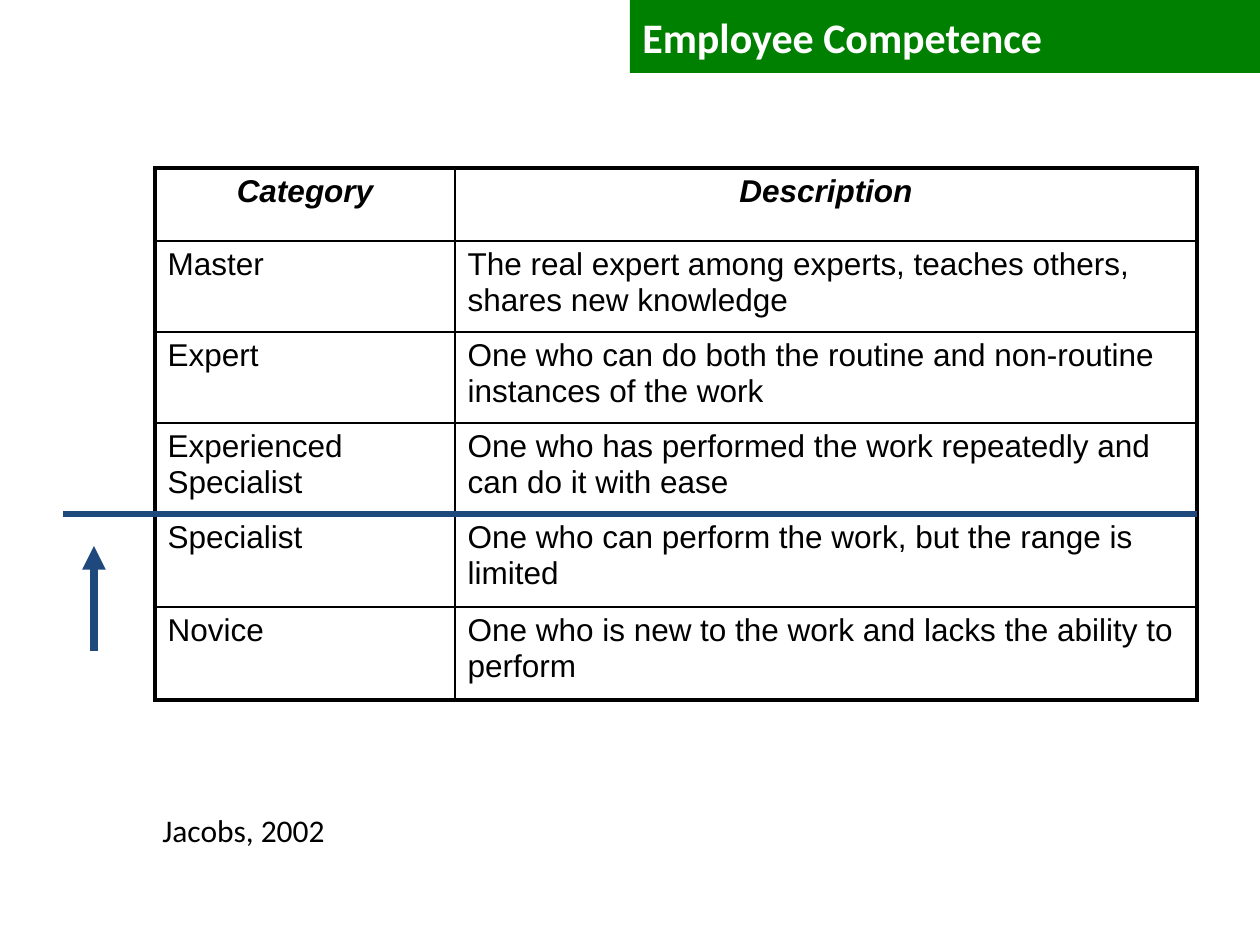
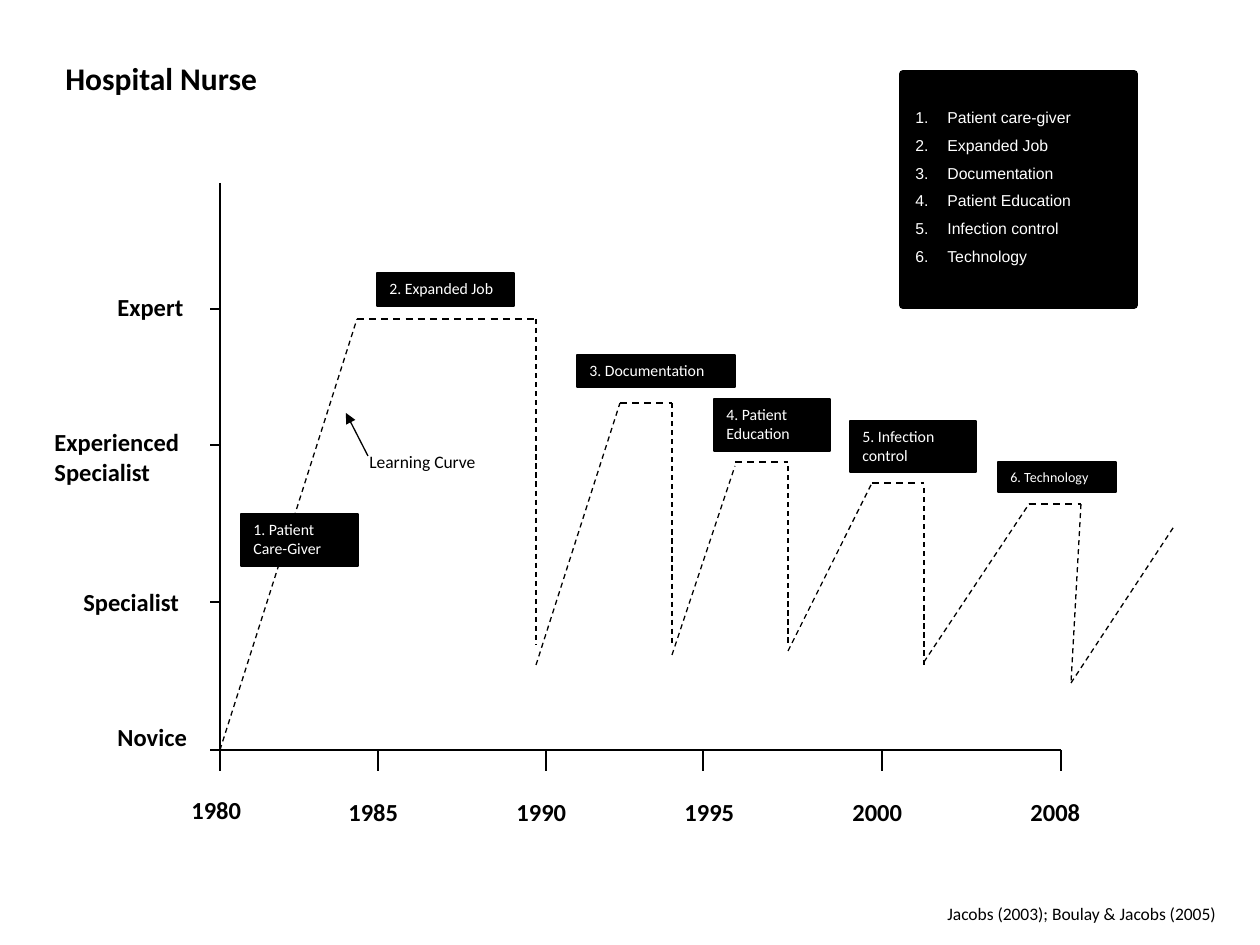
"""Build two slides on employee competence and the learning curves of a nurse."""
from lxml.etree import SubElement
from pptx import Presentation
from pptx.dml.color import RGBColor
from pptx.enum.dml import MSO_LINE
from pptx.enum.shapes import MSO_CONNECTOR, MSO_SHAPE
from pptx.enum.text import MSO_ANCHOR, PP_ALIGN
from pptx.oxml.ns import qn
from pptx.util import Pt

PX = 914400 / 126
BLACK = RGBColor(0x00, 0x00, 0x00)
WHITE = RGBColor(0xFF, 0xFF, 0xFF)
GREEN = RGBColor(0x00, 0x80, 0x00)
NAVY = RGBColor(0x1F, 0x49, 0x7D)

TITLE = {"name": "Calibri", "size": Pt(24), "bold": True}
HEADING = {"name": "Calibri", "size": Pt(18), "bold": True}
SOURCE = {"name": "Calibri", "size": Pt(18)}
AXIS = {"name": "Calibri", "size": Pt(14), "bold": True}
NOTE = {"name": "Calibri", "size": Pt(10)}
LABEL = {"name": "Calibri", "size": Pt(9)}
SMALL_LABEL = {"name": "Calibri", "size": Pt(8)}
LEGEND = {"name": "Arial", "size": Pt(9)}
CELL = {"name": "Arial", "size": Pt(18), "bold": False, "italic": False}
HEADER_CELL = {"name": "Arial", "size": Pt(18), "bold": True, "italic": True}


def add_box(page, place, lines, style, fill=None, border=0, wrap=True):
    """Add a text box, or a rectangle when a fill is given, and return it."""
    left, top, width, height = (round(value * PX) for value in place)
    if fill is None:
        box = page.shapes.add_textbox(left, top, width, height)
    else:
        box = page.shapes.add_shape(MSO_SHAPE.RECTANGLE, left, top, width, height)
        box.shadow.inherit = False
        box.fill.solid()
        box.fill.fore_color.rgb = fill
        box.line.color.rgb = fill
        box.line.width = Pt(border)
        if not border:
            box.line.fill.background()
    frame = box.text_frame
    frame.word_wrap = wrap
    frame.vertical_anchor = MSO_ANCHOR.TOP
    for index, line in enumerate(lines):
        para = frame.paragraphs[0] if index == 0 else frame.add_paragraph()
        para.alignment = PP_ALIGN.LEFT
        span = para.add_run()
        span.text = line
        span.font.color.rgb = BLACK if fill is None else WHITE
        for key, value in style.items():
            setattr(span.font, key, value)
    return box


def add_line(page, ends, color=BLACK, width=0.75, dashed=False, arrow=False):
    """Add a straight line, with an arrowhead at its end if asked."""
    line = page.shapes.add_connector(
        MSO_CONNECTOR.STRAIGHT, *(round(value * PX) for value in ends))
    line.line.color.rgb = color
    line.line.width = Pt(width)
    if dashed:
        line.line.dash_style = MSO_LINE.DASH
    properties = line._element.spPr
    if arrow:
        SubElement(properties.find(qn("a:ln")), qn("a:tailEnd"), type="triangle")
    SubElement(properties, qn("a:effectLst"))


deck = Presentation()
deck.slide_width = round(1260 * PX)
deck.slide_height = round(945 * PX)
blank = deck.slide_layouts[6]

page = deck.slides.add_slide(blank)
rows = [
    ("Category", "Description"),
    ("Master", "The real expert among experts, teaches others, shares new knowledge"),
    ("Expert", "One who can do both the routine and non-routine instances of the work"),
    ("Experienced Specialist",
     "One who has performed the work repeatedly and can do it with ease"),
    ("Specialist", "One who can perform the work, but the range is limited"),
    ("Novice", "One who is new to the work and lacks the ability to perform"),
]
column_widths = [300, 742]
row_heights = [73, 91, 91, 91, 93, 93]
table = page.shapes.add_table(
    len(rows), 2, round(155 * PX), round(168 * PX),
    round(sum(column_widths) * PX), round(sum(row_heights) * PX)).table
table.first_row = table.horz_banding = False
for column, width in zip(table.columns, column_widths):
    column.width = round(width * PX)
for row_index, (texts, height) in enumerate(zip(rows, row_heights)):
    table.rows[row_index].height = round(height * PX)
    for column_index, text in enumerate(texts):
        cell = table.cell(row_index, column_index)
        para = cell.text_frame.paragraphs[0]
        para.alignment = PP_ALIGN.LEFT if row_index else PP_ALIGN.CENTER
        span = para.add_run()
        span.text = text
        span.font.color.rgb = BLACK
        for key, value in (CELL if row_index else HEADER_CELL).items():
            setattr(span.font, key, value)
        outer_sides = {
            "lnL": column_index == 0,
            "lnR": column_index == 1,
            "lnT": row_index == 0,
            "lnB": row_index == len(rows) - 1,
        }
        properties = cell._tc.get_or_add_tcPr()
        for side, outer in outer_sides.items():
            border = SubElement(properties, qn(f"a:{side}"), w=str(Pt(2.25 if outer else 1)))
            SubElement(SubElement(border, qn("a:solidFill")), qn("a:srgbClr"), val=str(BLACK))
        cell.fill.background()

add_line(page, (63, 514, 1197, 514), NAVY, 3)
add_line(page, (94, 651, 94, 546), NAVY, 4.5, arrow=True)
title = add_box(page, (630, 0, 630, 73), ["Employee Competence"], TITLE, GREEN)
title.text_frame.vertical_anchor = MSO_ANCHOR.MIDDLE
add_box(page, (150, 805, 190, 50), ["Jacobs, 2002"], SOURCE, wrap=False)

page = deck.slides.add_slide(blank)
axis_x, axis_y = 220, 750
add_line(page, (axis_x, 183, axis_x, 760))
add_line(page, (axis_x, axis_y, 1061, axis_y))

levels = [
    (axis_y, (105, 716, 106, 42), ["Novice"]),
    (602, (71, 581, 140, 42), ["Specialist"]),
    (445, (42, 421, 170, 72), ["Experienced", "Specialist"]),
    (309, (105, 286, 102, 42), ["Expert"]),
]
for tick, place, lines in levels:
    add_line(page, (axis_x, tick, axis_x - 10, tick))
    add_box(page, place, lines, AXIS, wrap=False)

years = [
    (220, 179, 789, "1980"),
    (378, 336, 791, "1985"),
    (546, 504, 791, "1990"),
    (703, 672, 791, "1995"),
    (882, 840, 791, "2000"),
    (1061, 1018, 791, "2008"),
]
for tick, left, top, year in years:
    add_line(page, (tick, axis_y, tick, axis_y + 21))
    add_box(page, (left, top, 79, 42), [year], AXIS, wrap=False)

learning_curve = [
    (axis_x, axis_y, 357, 319), (357, 319, 536, 319), (536, 319, 536, 645),
    (536, 665, 620, 403), (620, 403, 672, 403), (672, 403, 672, 645),
    (672, 655, 735, 466), (735, 462, 788, 462), (788, 466, 788, 645),
    (788, 651, 872, 483), (872, 483, 924, 483), (924, 488, 924, 665),
    (924, 662, 1029, 504), (1029, 504, 1081, 504), (1081, 504, 1071, 683),
    (1071, 683, 1175, 525),
]
for ends in learning_curve:
    flat = ends[1] == ends[3]
    add_line(page, ends, width=1 if flat else 0.75, dashed=True)

stages = [
    ((241, 514, 117, 52), "1. Patient Care-Giver", LABEL),
    ((377, 273, 137, 33), "2. Expanded Job", LABEL),
    ((577, 355, 158, 32), "3. Documentation", LABEL),
    ((714, 399, 116, 52), "4. Patient Education", LABEL),
    ((850, 421, 126, 51), "5. Infection control", LABEL),
    ((998, 462, 118, 30), "6. Technology", SMALL_LABEL),
]
for place, text, style in stages:
    add_box(page, place, [text], style, BLACK, 0.75)

jobs = ["Patient care-giver", "Expanded Job", "Documentation",
        "Patient Education", "Infection control", "Technology"]
legend = add_box(page, (903, 74, 231, 231), jobs, LEGEND, BLACK, 4.5)
legend.text_frame.margin_top = round(34 * PX)
for para in legend.text_frame.paragraphs:
    para.space_after = Pt(5)
    properties = para._p.get_or_add_pPr()
    properties.set("marL", str(round(32 * PX)))
    properties.set("indent", str(round(-32 * PX)))
    SubElement(properties, qn("a:buFont"), typeface="Arial")
    SubElement(properties, qn("a:buAutoNum"), type="arabicPeriod")

add_box(page, (935, 897, 346, 34), ["Jacobs (2003); Boulay & Jacobs (2005)"], NOTE)
add_box(page, (53, 53, 248, 50), ["Hospital Nurse"], HEADING, wrap=False)
add_box(page, (357, 445, 147, 34), ["Learning Curve"], NOTE)
add_line(page, (368, 456, 346, 413), arrow=True)

deck.save("out.pptx")
